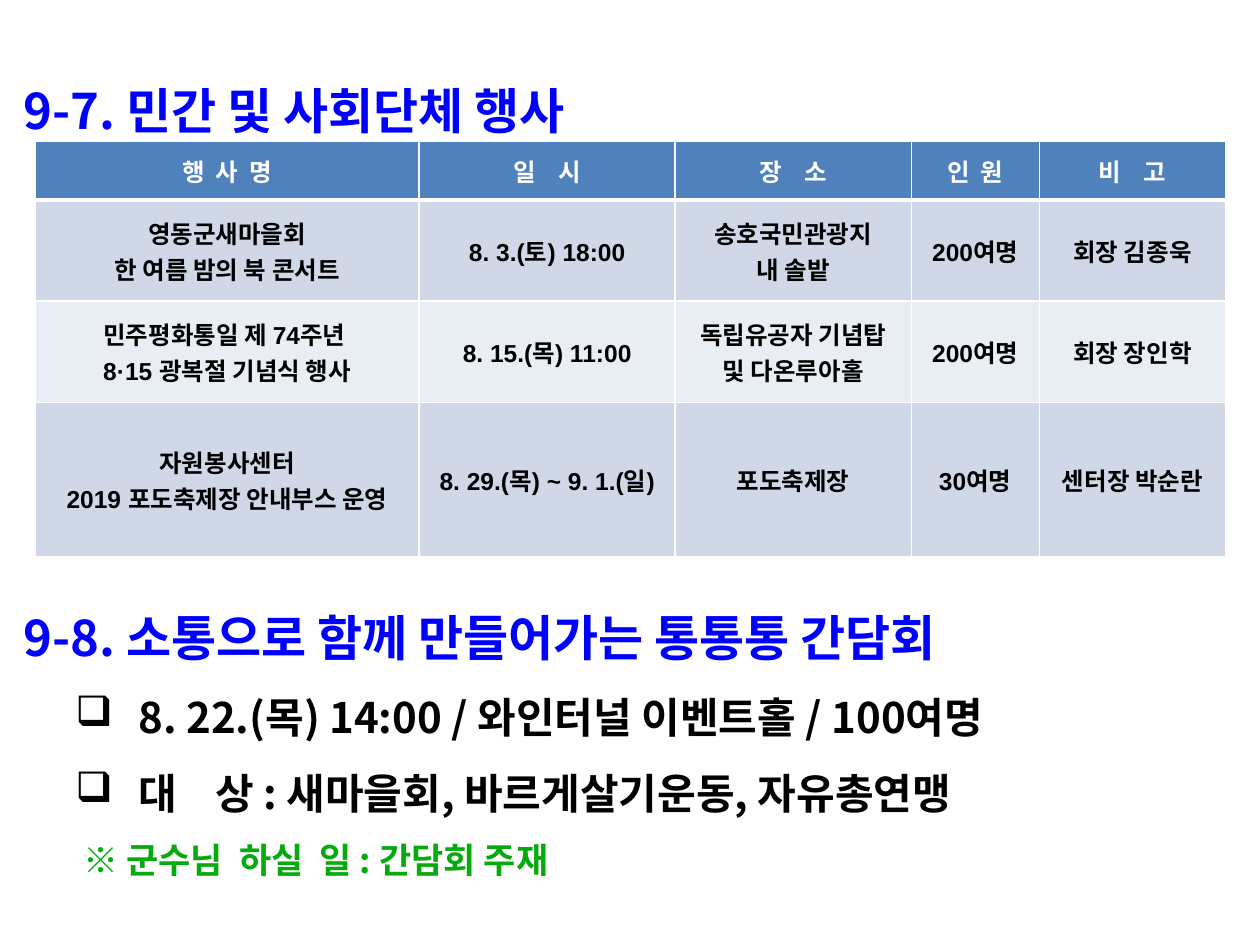
import pptx
import pptx.util
import pptx.dml.color
import pptx.enum.text
import pptx.oxml.ns
import lxml.etree

Cm, Pt = pptx.util.Cm, pptx.util.Pt
RGB = pptx.dml.color.RGBColor.from_string
ALIGN, ANCHOR = pptx.enum.text.PP_ALIGN, pptx.enum.text.MSO_ANCHOR
qn = pptx.oxml.ns.qn

THEME = {
    "sans": "Noto Sans CJK KR", "table_font": "Arial",
    "blue": "0000FF", "black": "000000", "green": "05AB0D", "white": "FFFFFF",
    "header": "4F81BD", "bands": ["D0D8E8", "E9EDF4"],
    "heading": 28, "item": 24, "note": 20, "cell": 14,
}


def add_run(p, text, font, size, color):
    r = p.add_run()
    r.text = text
    for name, value in {"name": font, "size": Pt(size), "bold": True}.items():
        setattr(r.font, name, value)
    r.font.color.rgb = RGB(color)
    lxml.etree.SubElement(r.font._element, qn("a:ea"), typeface=THEME["sans"])


def add_border(tcPr, side, width):
    ln = lxml.etree.SubElement(tcPr, qn(f"a:ln{side}"), w=str(Pt(width)))
    fill = lxml.etree.SubElement(ln, qn("a:solidFill"))
    lxml.etree.SubElement(fill, qn("a:srgbClr"), val=THEME["white"])


prs = pptx.Presentation()
prs.slide_width, prs.slide_height = Cm(25.4), Cm(19.05)
s = prs.slides.add_slide(prs.slide_layouts[6])

heading = (THEME["heading"], THEME["blue"], 1.47, -1.47, None)
item = (THEME["item"], THEME["black"], 2.54, -1.27, "❑")
note = (THEME["note"], THEME["green"], 2.54, -1.27, None)
sections = [
    (0.91, 9.93, [(" 9-7. 민간 및 사회단체 행사", heading)]),
    (11.53, 6.6, [
        (" 9-8. 소통으로 함께 만들어가는 통통통 간담회", heading),
        ("8. 22.(목) 14:00 / 와인터널 이벤트홀 / 100여명", item),
        ("대    상 : 새마을회, 바르게살기운동, 자유총연맹", item),
        (" ※ 군수님  하실  일 : 간담회 주재", note),
    ]),
]
for top, height, lines in sections:
    tf = s.shapes.add_textbox(0, Cm(top), prs.slide_width, Cm(height)).text_frame
    tf.word_wrap = True
    for i, (text, (size, color, margin, indent, bullet)) in enumerate(lines):
        p = tf.add_paragraph() if i else tf.paragraphs[0]
        p.line_spacing = 1.5
        p.level = 0 if size == THEME["heading"] else 1
        pPr = p._p.get_or_add_pPr()
        for name, value in {"marL": margin, "indent": indent}.items():
            pPr.set(name, str(Cm(value)))
        if bullet:
            clr = lxml.etree.SubElement(pPr, qn("a:buClr"))
            lxml.etree.SubElement(clr, qn("a:srgbClr"), val=THEME["black"])
            lxml.etree.SubElement(pPr, qn("a:buChar"), char=bullet)
        else:
            lxml.etree.SubElement(pPr, qn("a:buNone"))
        add_run(p, text, THEME["sans"], size, color)

rows = [
    ["행  사  명", "일    시", "장    소", "인  원", "비    고"],
    ["영동군새마을회\n한 여름 밤의 북 콘서트", "8. 3.(토) 18:00",
     "송호국민관광지\n내 솔밭", "200여명", "회장 김종욱"],
    ["민주평화통일 제 74주년 \n8·15 광복절 기념식 행사", "8. 15.(목) 11:00",
     "독립유공자 기념탑 및 다온루아홀", "200여명", "회장 장인학"],
    ["자원봉사센터\n2019 포도축제장 안내부스 운영", "8. 29.(목) ~ 9. 1.(일)",
     "포도축제장", "30여명", "센터장 박순란"],
]
widths = [7.74, 5.16, 4.76, 2.58, 3.76]
heights = [1.19, 2.04, 2.04, 3.12]
table = s.shapes.add_table(len(rows), len(widths), Cm(0.71), Cm(2.84),
                           Cm(sum(widths)), Cm(sum(heights))).table
for column, width in zip(table.columns, widths):
    column.width = Cm(width)
for i, (row, height) in enumerate(zip(rows, heights)):
    table.rows[i].height = Cm(height)
    fill = THEME["bands"][(i - 1) % 2] if i else THEME["header"]
    color = THEME["black"] if i else THEME["white"]
    for j, text in enumerate(row):
        cell = table.cell(i, j)
        cell.vertical_anchor = ANCHOR.MIDDLE
        tcPr = cell._tc.get_or_add_tcPr()
        for side, width in {"L": 1, "R": 1, "T": 3 if i == 1 else 1,
                            "B": 1 if i else 3}.items():
            add_border(tcPr, side, width)
        cell.fill.solid()
        cell.fill.fore_color.rgb = RGB(fill)
        tf = cell.text_frame
        for k, line in enumerate(text.split("\n")):
            p = tf.add_paragraph() if k else tf.paragraphs[0]
            p.alignment = ALIGN.CENTER
            add_run(p, line, THEME["table_font"], THEME["cell"], color)

prs.save("out.pptx")
